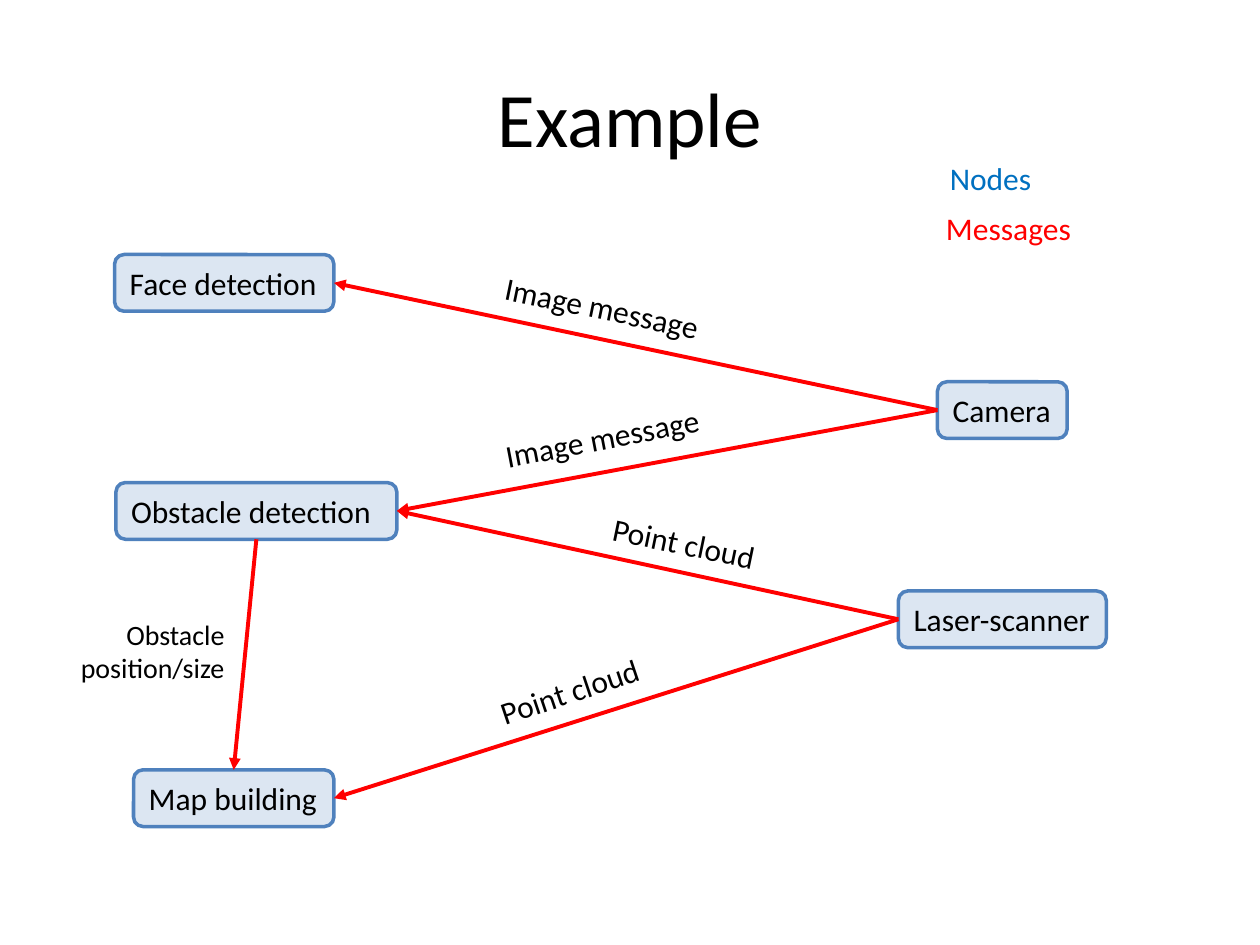
import pptx
import pptx.util
import pptx.dml.color
import pptx.enum.shapes
import pptx.enum.text
import pptx.oxml.ns
import lxml.etree

Inches = pptx.util.Inches
RGBColor = pptx.dml.color.RGBColor
ALIGN = pptx.enum.text.PP_ALIGN
ANCHOR = pptx.enum.text.MSO_ANCHOR

BLACK = RGBColor(0x00, 0x00, 0x00)
RED = RGBColor(0xFF, 0x00, 0x00)
BLUE = RGBColor(0x00, 0x70, 0xC0)
NODE_FILL = RGBColor(0xDC, 0xE6, 0xF2)
NODE_LINE = RGBColor(0x4F, 0x81, 0xBD)

NODE_HEIGHT = 0.45
LABEL_HEIGHT = 0.4
TOP, LEFT, BOTTOM, RIGHT = range(4)

NODES = [
    ("Face detection", 0.91, 2.02, 1.74),
    ("Obstacle detection", 0.92, 3.83, 2.23),
    ("Map building", 1.06, 6.11, 1.59),
    ("Laser-scanner", 7.13, 4.69, 1.65),
    ("Camera", 7.44, 3.03, 1.03),
]

MESSAGES = [
    ("Camera", LEFT, "Obstacle detection", RIGHT),
    ("Laser-scanner", LEFT, "Obstacle detection", RIGHT),
    ("Camera", LEFT, "Face detection", RIGHT),
    ("Obstacle detection", BOTTOM, "Map building", TOP),
    ("Laser-scanner", LEFT, "Map building", RIGHT),
]

LABELS = [
    ("Image message", 3.9, 2.24, 1.78, 11.7, BLACK),
    ("Image message", 3.9, 3.27, 1.78, -11, BLACK),
    ("Point cloud", 4.76, 4.11, 1.36, 11.7, BLACK),
    ("Point cloud", 3.85, 5.28, 1.36, -18.6, BLACK),
    ("Nodes", 7.44, 1.21, 0.86, 0, BLUE),
    ("Messages", 7.41, 1.61, 1.2, 0, RED),
]


def write(holder, wording, size=18, color=BLACK, align=ALIGN.LEFT,
          anchor=ANCHOR.TOP, wrap=True):
    frame = holder.text_frame
    for attribute, value in {"word_wrap": wrap, "vertical_anchor": anchor}.items():
        setattr(frame, attribute, value)
    paragraph = frame.paragraphs[0]
    paragraph.alignment = align
    run = paragraph.add_run()
    run.text = wording
    for attribute, value in {"name": "Calibri", "size": pptx.util.Pt(size)}.items():
        setattr(run.font, attribute, value)
    run.font.color.rgb = color


def add_node(shapes, wording, left, top, width):
    node = shapes.add_shape(
        pptx.enum.shapes.MSO_SHAPE.ROUNDED_RECTANGLE,
        Inches(left), Inches(top), Inches(width), Inches(NODE_HEIGHT))
    node.shadow.inherit = False
    node.fill.solid()
    node.fill.fore_color.rgb = NODE_FILL
    node.line.color.rgb = NODE_LINE
    node.line.width = pptx.util.Pt(2)
    write(node, wording, anchor=ANCHOR.MIDDLE)
    return node


def add_message(shapes, sender, sender_side, receiver, receiver_side):
    arrow = shapes.add_connector(
        pptx.enum.shapes.MSO_CONNECTOR.STRAIGHT, 0, 0, 0, 0)
    arrow.begin_connect(sender, sender_side)
    arrow.end_connect(receiver, receiver_side)
    arrow.line.color.rgb = RED
    arrow.line.width = pptx.util.Pt(2.25)
    qn = pptx.oxml.ns.qn
    lxml.etree.SubElement(arrow.line._get_or_add_ln(), qn("a:tailEnd"), type="triangle")
    lxml.etree.SubElement(arrow._element.spPr, qn("a:effectLst"))


def add_label(shapes, wording, left, top, width, height=LABEL_HEIGHT,
              rotation=0, **text_format):
    label = shapes.add_textbox(
        Inches(left), Inches(top), Inches(width), Inches(height))
    label.rotation = rotation
    write(label, wording, **text_format)


def main():
    deck = pptx.Presentation()
    deck.slide_width, deck.slide_height = Inches(10), Inches(7.5)
    shapes = deck.slides.add_slide(deck.slide_layouts[6]).shapes

    add_label(shapes, "Example", 0.5, 0.3, 9, 1.25,
              size=44, align=ALIGN.CENTER, anchor=ANCHOR.MIDDLE)
    nodes = {node[0]: add_node(shapes, *node) for node in NODES}
    for sender, sender_side, receiver, receiver_side in MESSAGES:
        add_message(shapes, nodes[sender], sender_side, nodes[receiver], receiver_side)
    for wording, left, top, width, rotation, color in LABELS:
        add_label(shapes, wording, left, top, width,
                  rotation=rotation, color=color, wrap=False)
    add_label(shapes, "Obstacle position/size", 0.51, 4.85, 1.37, 0.64,
              size=16, align=ALIGN.RIGHT)

    deck.save("out.pptx")


if __name__ == "__main__":
    main()
